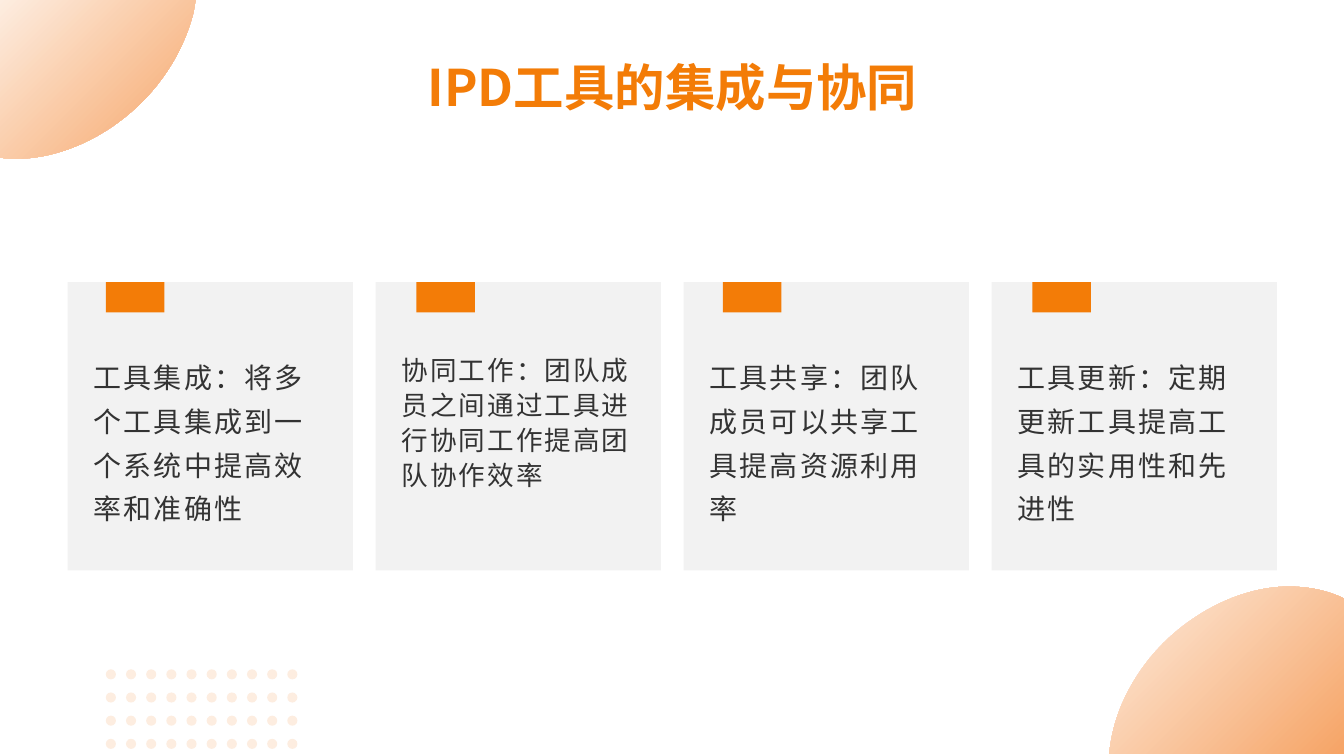
from lxml import etree
from pptx import Presentation
from pptx.dml.color import RGBColor
from pptx.enum.shapes import MSO_SHAPE
from pptx.enum.text import MSO_ANCHOR, PP_ALIGN
from pptx.oxml.ns import qn
from pptx.util import Inches, Pt

RECT, OVAL = MSO_SHAPE.RECTANGLE, MSO_SHAPE.OVAL
MIDDLE, CENTER = MSO_ANCHOR.MIDDLE, PP_ALIGN.CENTER
FONT = "Noto Sans CJK SC"
ORANGE, LIGHT_ORANGE, PALE_ORANGE = "F37C07", "F6A466", "FDEDE0"
CARD_GREY, TEXT_GREY = "F2F2F2", "333333"


def rgb(value):
    return RGBColor.from_string(value)


def add_plain(kind, x, y, w, h, color):
    sp = s.shapes.add_shape(kind, Inches(x), Inches(y), Inches(w), Inches(h))
    sp.shadow.inherit = False
    sp.fill.solid()
    sp.fill.fore_color.rgb = rgb(color)
    sp.line.fill.background()


prs = Presentation()
prs.slide_width, prs.slide_height = Inches(13.33), Inches(7.5)
s = prs.slides.add_slide(prs.slide_layouts[5])

# Corner blobs: two numbers are a line to a point, six are a cubic curve
BLOBS = [
    [(0, 0), (1.94, 0), (1.92, 0.12), (1.84, 0.44, 1.66, 0.77, 1.38, 1.04),
     (0.98, 1.42, 0.48, 1.61, 0.04, 1.57), (0, 1.56)],
    [(12.78, 5.82), (12.96, 5.82, 13.13, 5.85, 13.29, 5.92), (13.33, 5.94),
     (13.33, 7.48), (11, 7.48), (11.01, 7.41),
     (11.06, 7.04, 11.25, 6.66, 11.57, 6.35),
     (11.93, 6.01, 12.38, 5.82, 12.78, 5.82)],
]
STEPS = 24
for outline in BLOBS:
    points = [outline[0]]
    for part in outline[1:]:
        if len(part) == 2:
            points.append(part)
            continue
        x0, y0 = points[-1]
        x1, y1, x2, y2, x3, y3 = part
        for i in range(1, STEPS + 1):
            t = i / STEPS
            a, b, c, d = (1 - t) ** 3, 3 * t * (1 - t) ** 2, 3 * t * t * (1 - t), t ** 3
            points.append((a * x0 + b * x1 + c * x2 + d * x3,
                           a * y0 + b * y1 + c * y2 + d * y3))
    points = [(Inches(x), Inches(y)) for x, y in points]
    builder = s.shapes.build_freeform(*points[0])
    builder.add_line_segments(points[1:], close=True)
    sp = builder.convert_to_shape()
    sp.shadow.inherit = False
    sp.line.fill.background()
    sp.fill.gradient()
    sp.fill.gradient_angle = 315
    for stop, color in zip(sp.fill.gradient_stops, (PALE_ORANGE, LIGHT_ORANGE)):
        stop.color.rgb = rgb(color)

# Dot grid
for col in range(10):
    for row in range(4):
        add_plain(OVAL, 1.05 + 0.2 * col, 6.64 + 0.23 * row, 0.1, 0.1, PALE_ORANGE)

# Title
title = s.shapes.title
title.left, title.top = Inches(0.67), Inches(0.5)
title.width, title.height = Inches(12), Inches(0.71)
tf = title.text_frame
tf.text = "IPD工具的集成与协同"
tf.vertical_anchor = MIDDLE
p = tf.paragraphs[0]
p.alignment = CENTER
r = p.runs[0]
r.font.size, r.font.bold = Pt(36), True
r.font.color.rgb = rgb(ORANGE)

# Cards: tab position, text size, line spacing, text
CARDS = [
    (1.05, 20, 1.3, "工具集成：将多个工具集成到一个系统中提高效率和准确性"),
    (4.13, 19, 1.1, "协同工作：团队成员之间通过工具进行协同工作提高团队协作效率"),
    (7.17, 20, 1.3, "工具共享：团队成员可以共享工具提高资源利用率"),
    (10.24, 20, 1.3, "工具更新：定期更新工具提高工具的实用性和先进性"),
]
for i, (tab_x, size, spacing, text) in enumerate(CARDS):
    x = 0.67 + 3.055 * i
    add_plain(RECT, x, 2.8, 2.83, 2.86, CARD_GREY)
    add_plain(RECT, tab_x, 2.8, 0.58, 0.3, ORANGE)
    box = s.shapes.add_textbox(Inches(x + 0.16), Inches(3.43), Inches(2.49), Inches(2.01))
    tf = box.text_frame
    tf.word_wrap = True
    tf.text = text
    p = tf.paragraphs[0]
    p.line_spacing = spacing
    r = p.runs[0]
    r.font.size = Pt(size)
    r.font.color.rgb = rgb(TEXT_GREY)
    r.font._element.set("spc", "150")

# One typeface for Latin and East Asian text
for sp in s.shapes:
    for p in sp.text_frame.paragraphs:
        for r in p.runs:
            r.font.name = FONT
            etree.SubElement(r.font._element, qn("a:ea")).set("typeface", FONT)

prs.save("out.pptx")
